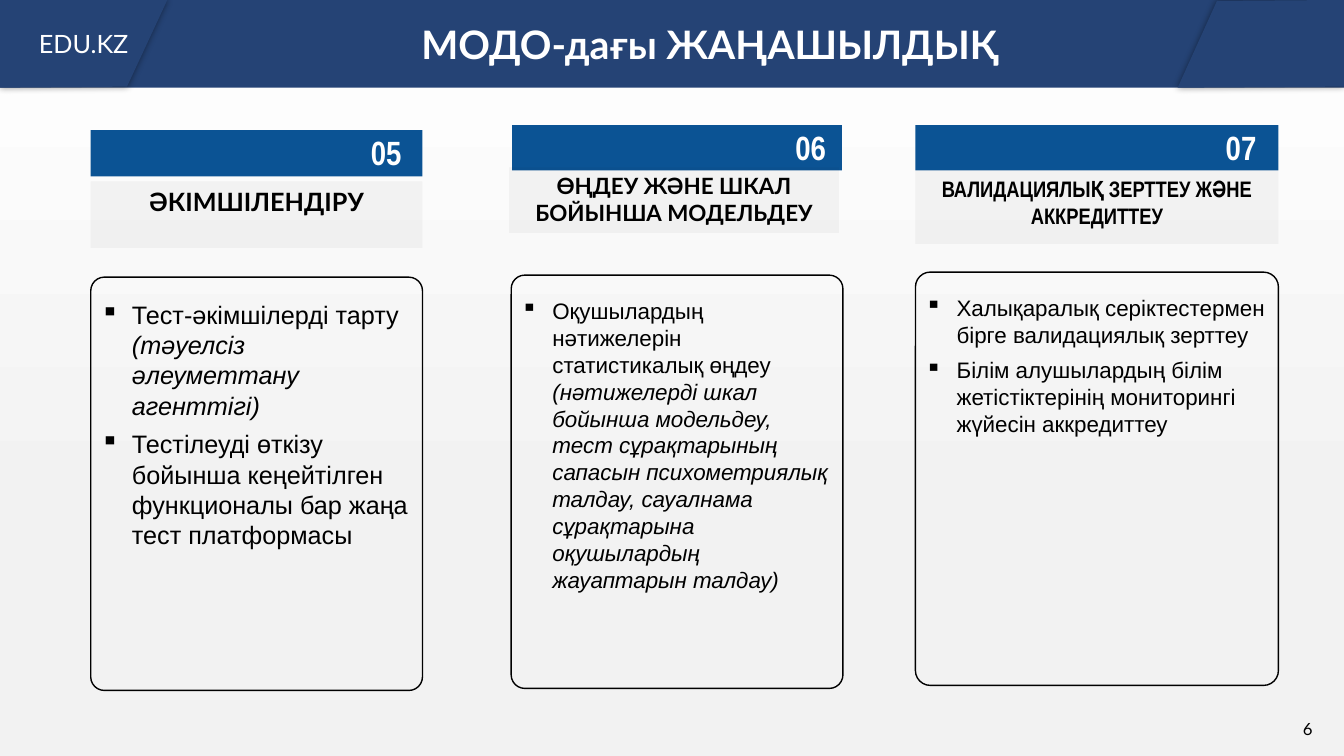
from pptx import Presentation
from pptx.dml.color import RGBColor
from pptx.enum.shapes import MSO_SHAPE
from pptx.enum.text import MSO_ANCHOR, MSO_AUTO_SIZE, PP_ALIGN
from pptx.oxml import parse_xml
from pptx.oxml.ns import nsdecls
from pptx.util import Inches, Pt

RECT, ROUND = MSO_SHAPE.RECTANGLE, MSO_SHAPE.ROUNDED_RECTANGLE
TOP, MIDDLE = MSO_ANCHOR.TOP, MSO_ANCHOR.MIDDLE
LEFT, CENTER, RIGHT = PP_ALIGN.LEFT, PP_ALIGN.CENTER, PP_ALIGN.RIGHT
FIXED = MSO_AUTO_SIZE.NONE

WHITE = RGBColor(0xFF, 0xFF, 0xFF)
BLACK = RGBColor(0, 0, 0)
PALE = RGBColor(0xF2, 0xF2, 0xF2)
NAVY = RGBColor(0x25, 0x43, 0x75)
BLUE = RGBColor(0x0B, 0x53, 0x94)
DARK = RGBColor(0x19, 0x19, 0x19)

WIDE, HIGH = 13.33, 7.5

# Each card: place of its bar, number with its inset, label and bullets
CARDS = [
    dict(x=0.9, y=1.29, w=3.29, bar=(0, 3.29, 0.46),
         num="05", inset=0.11,
         label="ӘКІМШІЛЕНДІРУ", font="Lato", size=18,
         place=(0, 0.51, 3.29, 0.66), drop=1.46, body=18,
         items=[[("Тест-әкімшілерді тарту ", False),
                 ("(тәуелсіз әлеуметтану агенттігі)", True)],
                [("Тестілеуді өткізу бойынша кеңейтілген функционалы "
                  "бар жаңа тест платформасы", False)]]),
    dict(x=5.07, y=1.24, w=3.29, bar=(0.01, 3.27, 0.45),
         num="06", inset=0.07,
         label="ӨҢДЕУ ЖӘНЕ ШКАЛ БОЙЫНША МОДЕЛЬДЕУ", font="Lato", size=16,
         place=(-0.02, 0.42, 3.27, 0.65), drop=1.49, body=16,
         items=[[("Оқушылардың нәтижелерін статистикалық өңдеу ", False),
                 ("(нәтижелерді шкал бойынша модельдеу, тест сұрақтарының "
                  "сапасын психометриялық талдау, сауалнама сұрақтарына "
                  "оқушылардың жауаптарын талдау)", True)]]),
    dict(x=9.08, y=1.24, w=3.6, bar=(0, 3.6, 0.45),
         num="07", inset=0.12,
         label="ВАЛИДАЦИЯЛЫҚ ЗЕРТТЕУ ЖӘНЕ АККРЕДИТТЕУ",
         font="Arial Narrow", size=16,
         place=(0, 0.45, 3.6, 0.73), drop=1.46, body=16,
         items=[[("Халықаралық серіктестермен бірге валидациялық зерттеу",
                  False)],
                [("Білім алушылардың білім жетістіктерінің мониторингі "
                  "жүйесін аккредиттеу", False)]]),
]


def add_run(para, text, font, size, color=BLACK, bold=False, italic=False):
    run = para.add_run()
    run.text = text
    run.font.name, run.font.size = font, Pt(size)
    run.font.color.rgb = color
    run.font.bold, run.font.italic = bold, italic


def set_frame(shape, anchor=TOP):
    frame = shape.text_frame
    frame.word_wrap = True
    frame.auto_size = FIXED
    frame.vertical_anchor = anchor
    return frame


def write(shape, text, font, size, color, bold, align, anchor=TOP):
    para = set_frame(shape, anchor).paragraphs[0]
    para.alignment = align
    add_run(para, text, font, size, color, bold)
    return para


def add_text(slide, x, y, w, h):
    return slide.shapes.add_textbox(Inches(x), Inches(y), Inches(w), Inches(h))


def add_box(slide, kind, x, y, w, h, fill=None):
    box = slide.shapes.add_shape(kind, Inches(x), Inches(y),
                                 Inches(w), Inches(h))
    box.shadow.inherit = False
    box.line.fill.background()
    if fill is None:
        box.fill.background()
    else:
        box.fill.solid()
        box.fill.fore_color.rgb = fill
    return box


def add_tab(slide, points):
    spots = [(Inches(x), Inches(y)) for x, y in points]
    maker = slide.shapes.build_freeform(*spots[0])
    maker.add_line_segments(spots[1:], close=True)
    tab = maker.convert_to_shape()
    tab.fill.solid()
    tab.fill.fore_color.rgb = NAVY
    tab.line.fill.background()
    # Soft shadow around the tab
    tab.element.spPr.append(parse_xml(
        f'<a:effectLst {nsdecls("a")}><a:outerShdw blurRad="{Pt(5)}" dist="0">'
        '<a:srgbClr val="000000"><a:alpha val="40000"/></a:srgbClr>'
        '</a:outerShdw></a:effectLst>'))
    return tab


def add_header(slide, w, h):
    # Band with a slanted tab at each end
    add_box(slide, RECT, 0, 0, w, h, NAVY)
    tab = add_tab(slide, [(0, 0), (0, h), (1.26, h - 0.01), (1.66, 0)])
    write(tab, "EDU.KZ", "Lato", 18, WHITE, False, CENTER, MIDDLE)
    end = add_tab(slide, [(w, h - 0.01), (w, 0), (w - 1.26, 0.01),
                          (w - 1.65, h)])

    # Title, lifted above the band
    title = slide.shapes.title
    title.left, title.top = Inches(4.08), Inches(0.12)
    title.width, title.height = Inches(6.26), Inches(0.61)
    para = write(title, "МОДО-дағы ЖАҢАШЫЛДЫҚ", "Lato", 28, WHITE, True, LEFT)
    para.line_spacing, para.space_after = 1.07, Pt(8)
    end.element.addnext(title.element)


def add_bullets(shape, items, size):
    frame = set_frame(shape)
    for i, item in enumerate(items):
        para = frame.paragraphs[0] if i == 0 else frame.add_paragraph()
        props = para._p.get_or_add_pPr()
        props.set("marL", str(Inches(0.31)))
        props.set("indent", str(-Inches(0.31)))
        props.append(parse_xml(f'<a:buChar {nsdecls("a")} char="▪"/>'))
        para.space_after = Pt(6)
        for text, italic in item:
            add_run(para, text, "Arial", size, italic=italic)


def add_card(slide, card):
    x, y, w = card["x"], card["y"], card["w"]

    # Numbered bar
    dx, wide, high = card["bar"]
    add_box(slide, RECT, x + dx, y, wide, high, BLUE)
    num = add_text(slide, x + w - card["inset"] - 0.9, y - 0.03, 0.9, 0.5)
    write(num, card["num"], "Arial Narrow", 24, WHITE, True, RIGHT)

    # Label on a faint tint
    dx, dy, wide, high = card["place"]
    label = add_box(slide, RECT, x + dx, y + dy, wide, high, DARK)
    tint = label.element.spPr.find(".//{*}solidFill/{*}srgbClr")
    tint.append(parse_xml(f'<a:alpha {nsdecls("a")} val="4000"/>'))
    write(label, card["label"], card["font"], card["size"], BLACK, True, CENTER)

    # Rounded outline with bullets
    top = y + card["drop"]
    edge = add_box(slide, ROUND, x, top, w, 4.1)
    edge.adjustments[0] = 0.041
    edge.line.color.rgb = BLACK
    edge.line.width = Pt(1)
    body = add_text(slide, x, top + 0.17, w, 3.06)
    add_bullets(body, card["items"], card["body"])


def set_back(slide):
    fill = slide.background.fill
    fill.gradient()
    fill.gradient_angle = 270
    for stop, color, spot in zip(fill.gradient_stops, (WHITE, PALE), (0, 0.68)):
        stop.color.rgb = color
        stop.position = spot


def main():
    deck = Presentation()
    deck.slide_width, deck.slide_height = Inches(WIDE), Inches(HIGH)
    slide = deck.slides.add_slide(deck.slide_layouts[5])
    set_back(slide)
    add_header(slide, WIDE, 0.87)
    for card in CARDS:
        add_card(slide, card)
    # Page number
    page = add_text(slide, 12.52, 7.08, 0.9, 0.3)
    write(page, "6", "Lato", 12, BLACK, False, CENTER)
    deck.save("out.pptx")


if __name__ == "__main__":
    main()
